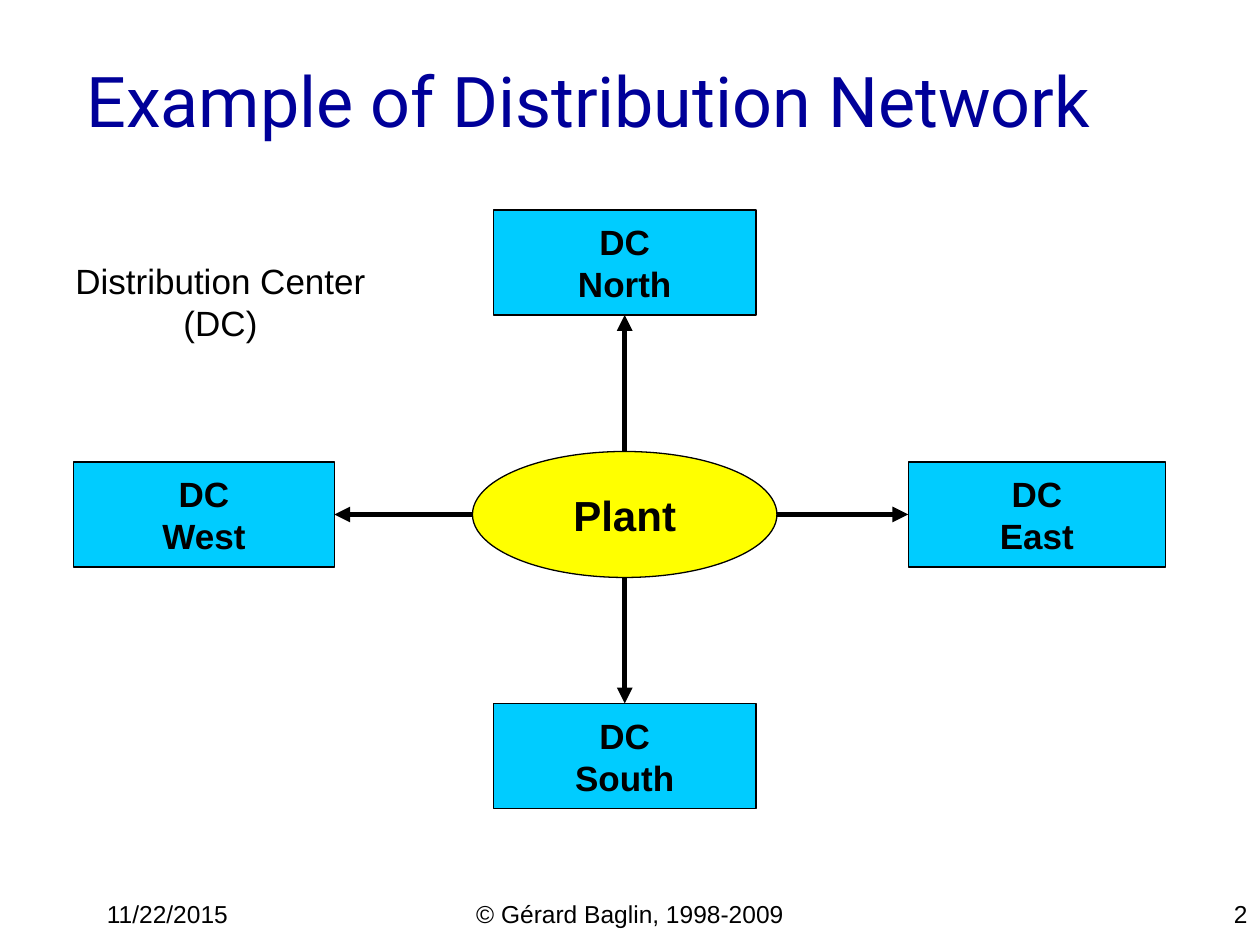
from lxml import etree
from pptx import Presentation
from pptx.dml.color import RGBColor
from pptx.enum.shapes import MSO_CONNECTOR, MSO_SHAPE
from pptx.enum.text import MSO_ANCHOR, PP_ALIGN
from pptx.oxml.ns import qn
from pptx.util import Inches, Pt

STRAIGHT = MSO_CONNECTOR.STRAIGHT
RECTANGLE, OVAL = MSO_SHAPE.RECTANGLE, MSO_SHAPE.OVAL
LEFT, CENTER, RIGHT = PP_ALIGN.LEFT, PP_ALIGN.CENTER, PP_ALIGN.RIGHT
TOP, MIDDLE = MSO_ANCHOR.TOP, MSO_ANCHOR.MIDDLE

BLACK = RGBColor(0x00, 0x00, 0x00)
NAVY = RGBColor(0x00, 0x00, 0x99)
YELLOW = RGBColor(0xFF, 0xFF, 0x00)
CYAN = RGBColor(0x00, 0xCC, 0xFF)

SLIDE_W, SLIDE_H = 10, 7.5
COLS, ROWS = 24, 18
COL, ROW = SLIDE_W / COLS, SLIDE_H / ROWS


def grid(col, row, cols, rows):
    """Turn grid units into left, top, width and height."""
    return (Inches(col * COL), Inches(row * ROW),
            Inches(cols * COL), Inches(rows * ROW))


def write(shape, *lines, size=20, font="Arial", color=BLACK, bold=False,
          align=CENTER, anchor=MIDDLE, wrap=True):
    frame = shape.text_frame
    frame.word_wrap = wrap
    frame.vertical_anchor = anchor
    frame.text = "\n".join(lines)
    for paragraph in frame.paragraphs:
        paragraph.alignment = align
        for run in paragraph.runs:
            run.font.size = Pt(size)
            run.font.name = font
            run.font.bold = bold
            run.font.color.rgb = color


def add_title(slide, box, text):
    title = slide.shapes.title
    title.left, title.top, title.width, title.height = box
    write(title, text, size=40, font="Roboto", color=NAVY, align=RIGHT)


def add_node(slide, kind, box, fill, *lines, size=20):
    node = slide.shapes.add_shape(kind, *box)
    node.shadow.inherit = False
    node.fill.solid()
    node.fill.fore_color.rgb = fill
    node.line.color.rgb = BLACK
    node.line.width = Pt(0.75)
    write(node, *lines, size=size, bold=True, wrap=False)
    return node


def add_arrow(slide, start, center, site):
    """Draw an arrow from a point to a connection site of a center."""
    arrow = slide.shapes.add_connector(STRAIGHT, *start, *start)
    arrow.end_connect(center, site)
    arrow.line.color.rgb = BLACK
    arrow.line.width = Pt(3)
    outline = arrow.line._get_or_add_ln()
    etree.SubElement(outline, qn("a:tailEnd"), type="triangle")
    etree.SubElement(arrow._element.spPr, qn("a:effectLst"))


def add_network(slide, col, row):
    """Place the plant and its four distribution centers from a corner."""
    plant_box = grid(col + 7.6, row + 4.6, 5.8, 2.4)
    left, top, width, height = plant_box
    middle_x, middle_y = left + width // 2, top + height // 2
    centers = [
        ("North", (8, 0, 5), (middle_x, top), 2),
        ("West", (0, 4.8, 4.97), (left, middle_y), 3),
        ("East", (15.9, 4.8, 4.9), (left + width, middle_y), 1),
        ("South", (8, 9.4, 5), (middle_x, top + height), 0),
    ]
    add_node(slide, OVAL, plant_box, YELLOW, "Plant", size=24)
    for region, (dx, dy, cols), start, site in centers:
        box = grid(col + dx, row + dy, cols, 2)
        center = add_node(slide, RECTANGLE, box, CYAN, "DC", region)
        add_arrow(slide, start, center, site)


def add_legend(slide, box):
    legend = slide.shapes.add_textbox(*box)
    write(legend, "Distribution Center (DC)", anchor=TOP)
    frame = legend.text_frame
    frame.margin_top = Inches(0.23)
    frame.margin_left = frame.margin_right = Inches(0.2)


def add_footer(slide, row):
    parts = [
        ("11/22/2015", 1.8, 5, LEFT),
        ("© Gérard Baglin, 1998-2009", 8.2, 7.6, CENTER),
        ("2", 19, 5, RIGHT),
    ]
    for text, col, cols, align in parts:
        part = slide.shapes.add_textbox(*grid(col, row, cols, 0.6))
        write(part, text, size=14, align=align, anchor=TOP)


def main():
    deck = Presentation()
    deck.slide_width, deck.slide_height = Inches(SLIDE_W), Inches(SLIDE_H)
    slide = deck.slides.add_slide(deck.slide_layouts[5])
    add_title(slide, grid(0.6, 0.4, 20.4, 3), "Example of Distribution Network")
    add_network(slide, 1.4, 4)
    add_legend(slide, grid(0.4, 4.4, 7.6, 1.85))
    add_footer(slide, 17)
    deck.save("out.pptx")


if __name__ == "__main__":
    main()
